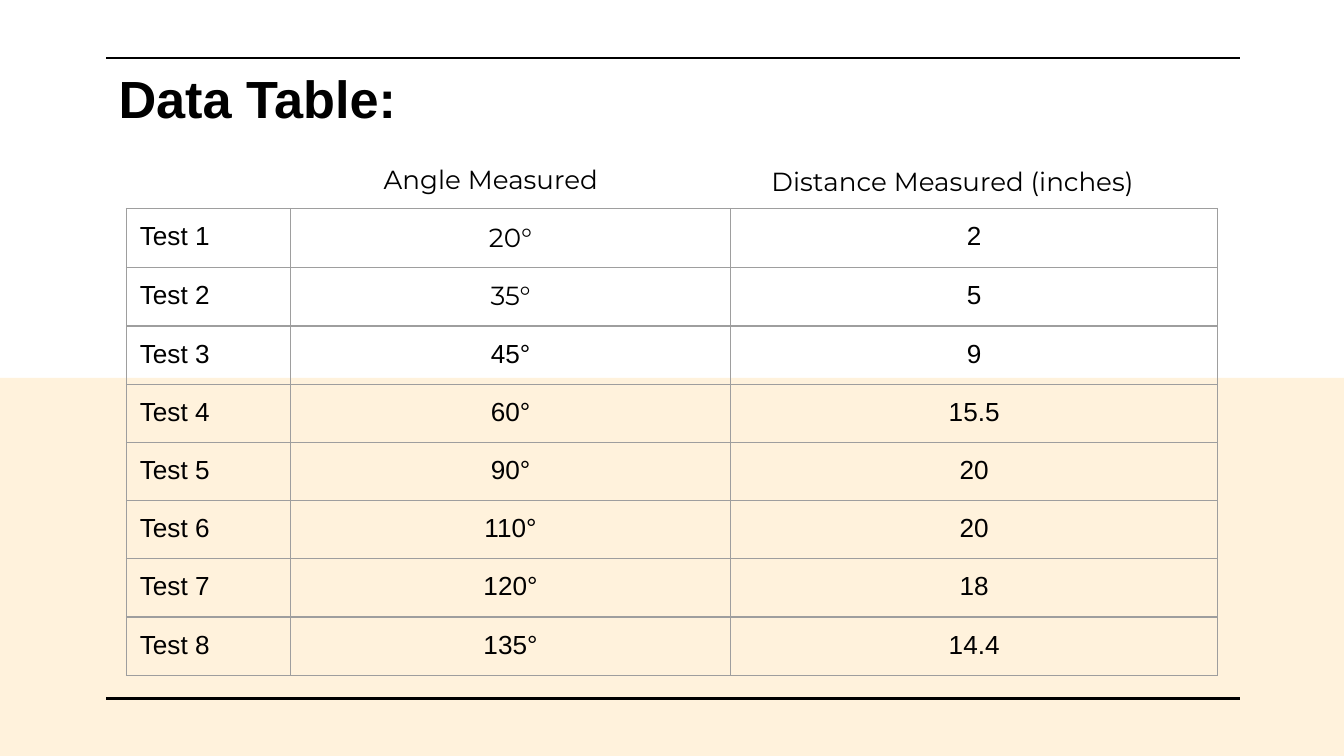
from pptx import Presentation
from pptx.dml.color import RGBColor
from pptx.enum import shapes, text
from pptx.oxml import parse_xml
from pptx.oxml import ns
from pptx.util import Pt

HUES = {"ink": "000000", "cream": "FFF2DC", "grid": "9E9E9E"}
ANGLES = ["20°", "35°", "45°", "60°", "90°", "110°", "120°", "135°"]
INCHES = ["2", "5", "9", "15.5", "20", "20", "18", "14.4"]
COLS = [87.9, 235.9, 260.9]
INSET = 7.2
ALIGN = text.PP_ALIGN


def hue(name):
    return RGBColor.from_string(HUES[name])


def write(frame, words, size=14, face="Arial", bold=False, align=ALIGN.LEFT):
    para = frame.paragraphs[0]
    para.alignment = align
    run = para.add_run()
    run.text = words
    font = run.font
    font.size, font.name, font.bold = Pt(size), face, bold
    font.color.rgb = hue("ink")


def pad(item):
    item.margin_left = item.margin_right = Pt(INSET)
    item.margin_top = item.margin_bottom = Pt(INSET)


def set_box(shape, x, y, w, h):
    shape.left, shape.top = Pt(x), Pt(y)
    shape.width, shape.height = Pt(w), Pt(h)


def add_rule(slide, x, y, w):
    line = slide.shapes.add_connector(
        shapes.MSO_CONNECTOR.STRAIGHT, Pt(x), Pt(y), Pt(x + w), Pt(y))
    line.line.color.rgb = hue("ink")
    line.line.width = Pt(1.5)
    line._element.spPr.append(parse_xml(f"<a:effectLst {ns.nsdecls('a')}/>"))


def add_frame(slide, w, h):
    """Cream lower half and the two rules."""
    band = slide.shapes.add_shape(
        shapes.MSO_SHAPE.RECTANGLE, 0, Pt(h / 2), Pt(w), Pt(h / 2))
    band.shadow.inherit = False
    band.fill.solid()
    band.fill.fore_color.rgb = hue("cream")
    band.line.fill.background()
    for y in (31.1, h - 30.7):
        add_rule(slide, 56.9, y, 607.6)


def add_title(slide, x, y, w, h):
    title = slide.shapes.title
    set_box(title, x, y, w, h)
    frame = title.text_frame
    pad(frame)
    frame.word_wrap = True
    frame.auto_size = text.MSO_AUTO_SIZE.NONE
    frame.vertical_anchor = text.MSO_ANCHOR.TOP
    write(frame, "Data Table:", 28, bold=True)


def add_edges(cell):
    props = cell._tc.get_or_add_tcPr()
    for side in "LRTB":
        props.append(parse_xml(
            f'<a:ln{side} {ns.nsdecls("a")} w="{Pt(0.75)}"><a:solidFill>'
            f'<a:srgbClr val="{HUES["grid"]}"/></a:solidFill></a:ln{side}>'))


def add_grid(slide, x, y, w, h):
    """Test results, one row for each test."""
    rows = [(f"Test {n}", a, d)
            for n, (a, d) in enumerate(zip(ANGLES, INCHES), 1)]
    table = slide.shapes.add_table(
        len(rows), len(COLS), Pt(x), Pt(y), Pt(w), Pt(h)).table
    table.first_row = table.horz_banding = False
    for col, wide in zip(table.columns, COLS):
        col.width = Pt(wide)
    for r, row in enumerate(rows):
        table.rows[r].height = Pt(h / len(rows))
        for c, words in enumerate(row):
            cell = table.cell(r, c)
            pad(cell)
            add_edges(cell)
            cell.fill.background()
            face = "Montserrat" if c == 1 and r < 2 else "Arial"
            write(cell.text_frame, words, face=face,
                  align=ALIGN.CENTER if c else ALIGN.LEFT)


def add_label(slide, words, x, y, w, h):
    box = slide.shapes.add_textbox(Pt(x), Pt(y), Pt(w), Pt(h))
    frame = box.text_frame
    pad(frame)
    frame.word_wrap = True
    frame.auto_size = text.MSO_AUTO_SIZE.SHAPE_TO_FIT_TEXT
    write(frame, words, face="Montserrat")


def main():
    deck = Presentation()
    wide, high = 720, 405
    deck.slide_width, deck.slide_height = Pt(wide), Pt(high)
    slide = deck.slides.add_slide(deck.slide_layouts.get_by_name("Title Only"))

    add_frame(slide, wide, high)
    add_title(slide, 56.3, 28.2, 607.6, 36.7)
    add_grid(slide, 67.7, 111.7, sum(COLS), 249.6)

    # Column headings
    add_label(slide, "Angle Measured", 198.5, 80.1, 131.3, 31.5)
    add_label(slide, "Distance Measured (inches)", 406.2, 81.3, 231.3, 31.5)
    deck.save("out.pptx")


if __name__ == "__main__":
    main()
